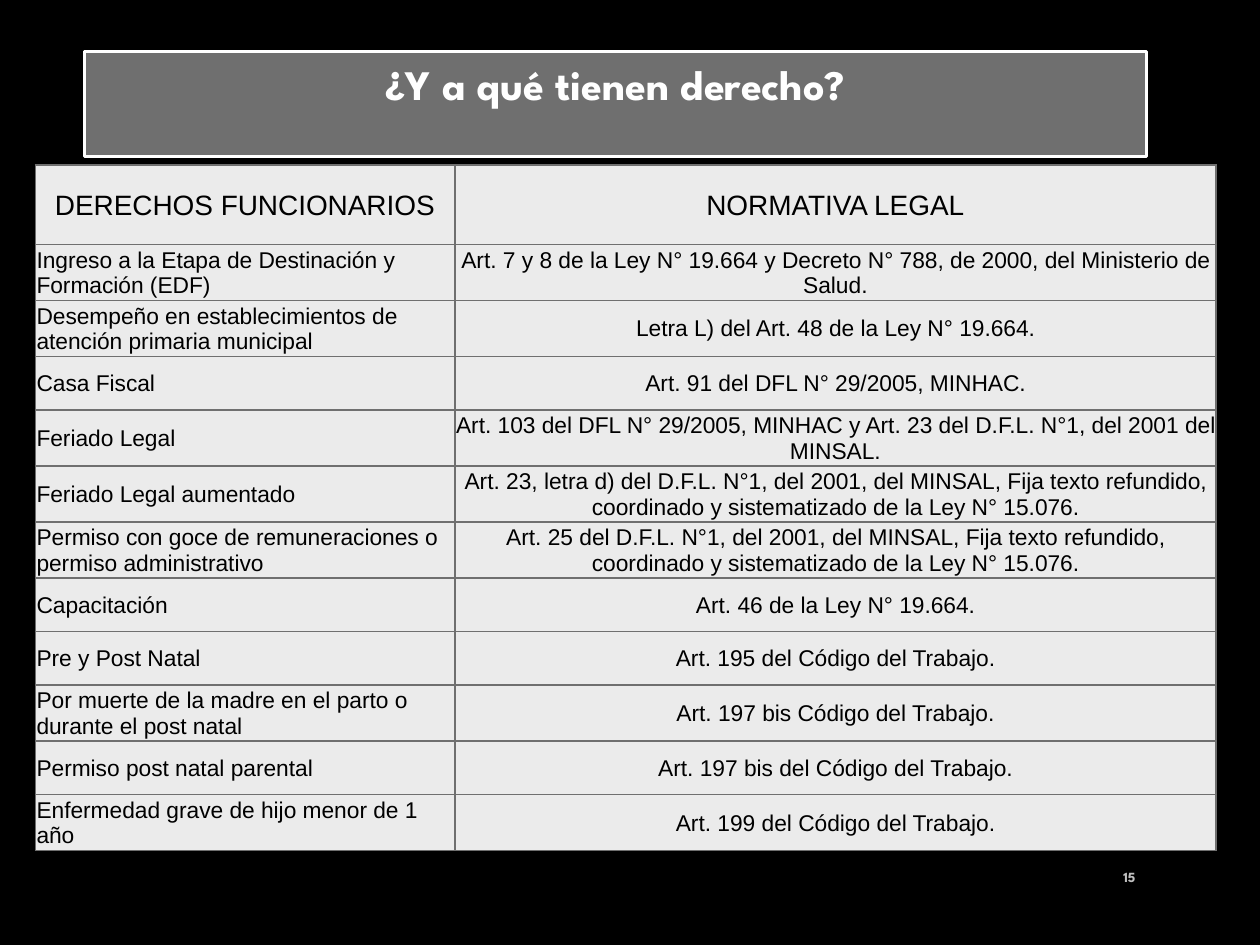
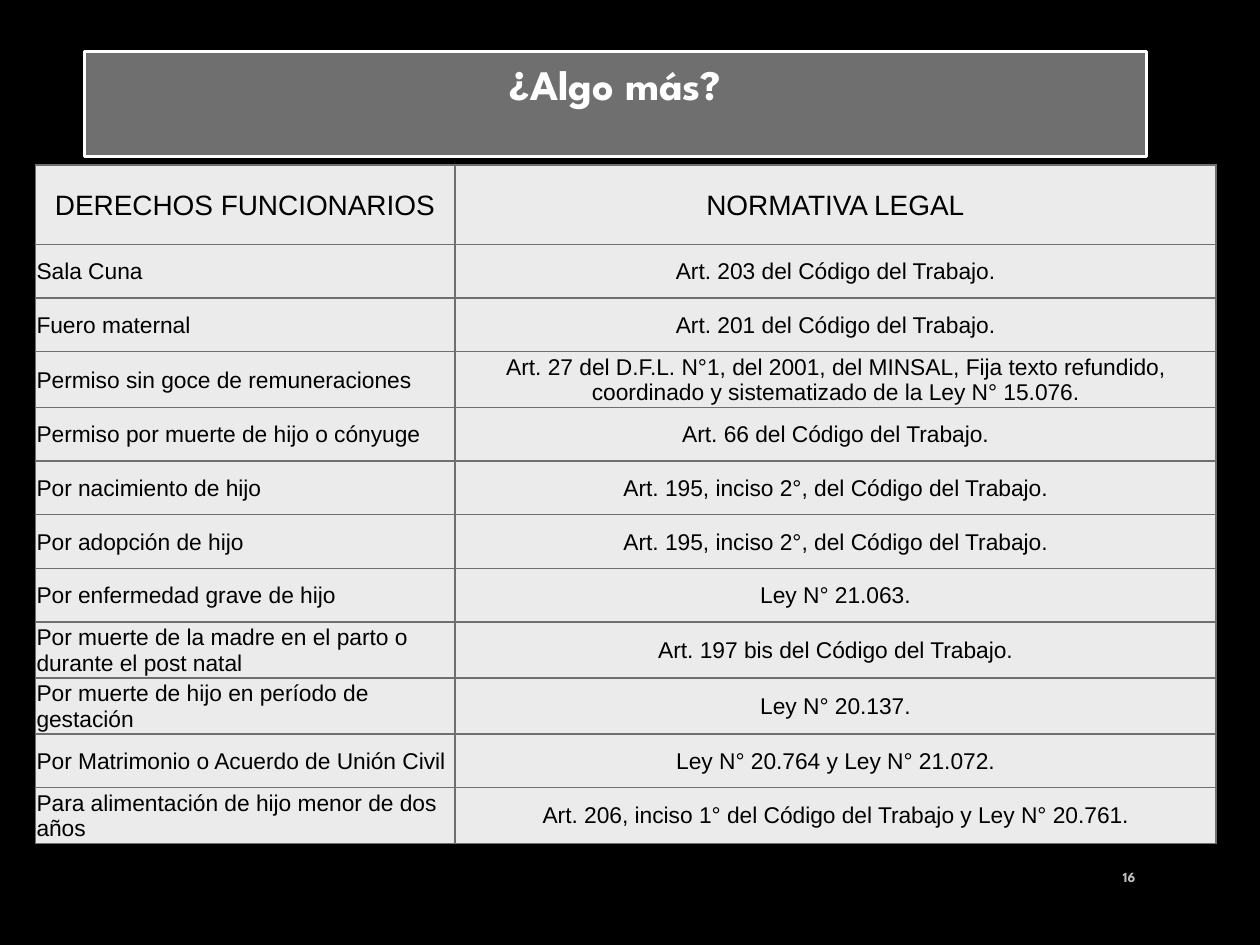
import pptx
import pptx.dml.color
import pptx.enum.text
import pptx.oxml
import pptx.oxml.ns
import pptx.util

WIDE, HIGH = pptx.util.Inches(10), pptx.util.Inches(7.5)
COL, ROW = WIDE / 100, HIGH / 100
BLACK, GREY, PALE, WHITE, DIM = "000000", "6F6F6F", "EBEBEB", "FFFFFF", "BFBFBF"
BRAND, PLAIN = "League Spartan", "Arial"
ALIGN = pptx.enum.text.PP_ALIGN
ANCHOR = pptx.enum.text.MSO_ANCHOR

TITLE_BOX = (6.7, 5.47, 84.3, 6.67)
PAGE_BOX = (86.6, 90.13, 4.5, 5.33)
TABLE_BOX = (2.8, 17.47, 93.7, 70.77)
LEFT_COL = 33.3
HEAD_ROW, BODY_ROW = 8.4, 5.67

HEADS = ("DERECHOS FUNCIONARIOS", "NORMATIVA LEGAL")
REST = "del MINSAL, Fija texto refundido, coordinado y sistematizado de la Ley N° 15.076."
RIGHTS = [
    ("Ingreso a la Etapa de Destinación y Formación (EDF)",
     "Art. 7 y 8 de la Ley N° 19.664 y Decreto N° 788, de 2000, del Ministerio de Salud."),
    ("Desempeño en establecimientos de atención primaria municipal",
     "Letra L) del Art. 48 de la Ley N° 19.664."),
    ("Casa Fiscal", "Art. 91 del DFL N° 29/2005, MINHAC."),
    ("Feriado Legal",
     "Art. 103 del DFL N° 29/2005, MINHAC y Art. 23 del D.F.L. N°1, del 2001 del MINSAL."),
    ("Feriado Legal aumentado", "Art. 23, letra d) del D.F.L. N°1, del 2001, " + REST),
    ("Permiso con goce de remuneraciones o permiso administrativo",
     "Art. 25 del D.F.L. N°1, del 2001, " + REST),
    ("Capacitación", "Art. 46 de la Ley N° 19.664."),
    ("Pre y Post Natal", "Art. 195 del Código del Trabajo."),
    ("Por muerte de la madre en el parto o durante el post natal",
     "Art. 197 bis Código del Trabajo."),
    ("Permiso post natal parental", "Art. 197 bis del Código del Trabajo."),
    ("Enfermedad grave de hijo menor de 1 año", "Art. 199 del Código del Trabajo."),
]
MORE = [
    ("Sala Cuna", "Art. 203 del Código del Trabajo."),
    ("Fuero maternal", "Art. 201 del Código del Trabajo."),
    ("Permiso sin goce de remuneraciones", "Art. 27 del D.F.L. N°1, del 2001, " + REST),
    ("Permiso por muerte de hijo o cónyuge", "Art. 66 del Código del Trabajo."),
    ("Por nacimiento de hijo", "Art. 195, inciso 2°, del Código del Trabajo."),
    ("Por adopción de hijo", "Art. 195, inciso 2°, del Código del Trabajo."),
    ("Por enfermedad grave de hijo", "Ley N° 21.063."),
    ("Por muerte de la madre en el parto o durante el post natal",
     "Art. 197 bis del Código del Trabajo."),
    ("Por muerte de hijo en período de gestación", "Ley N° 20.137."),
    ("Por Matrimonio o Acuerdo de Unión Civil", "Ley N° 20.764 y Ley N° 21.072."),
    ("Para alimentación de hijo menor de dos años",
     "Art. 206, inciso 1° del Código del Trabajo y Ley N° 20.761."),
]


def tint(code):
    """Turn a hex string into a colour."""
    return pptx.dml.color.RGBColor.from_string(code)


def paint(fill, code):
    """Make a fill solid in one colour."""
    fill.solid()
    fill.fore_color.rgb = tint(code)


def place(box):
    """Turn a box in grid columns and rows into lengths."""
    left, top, width, height = box
    return round(left * COL), round(top * ROW), round(width * COL), round(height * ROW)


def write(frame, text, size, face, code, align, bold=False):
    """Put one styled paragraph into a text frame."""
    frame.word_wrap = True
    frame.text = text
    line = frame.paragraphs[0]
    line.alignment = align
    font = line.runs[0].font
    font.size, font.name, font.bold = pptx.util.Pt(size), face, bold
    font.color.rgb = tint(code)


def add_title(slide, box, text):
    """Set the title as a framed grey band."""
    band = slide.shapes.title
    band.left, band.top, band.width, band.height = place(box)
    paint(band.fill, GREY)
    band.line.color.rgb = tint(WHITE)
    band.line.width = pptx.util.Pt(2)
    write(band.text_frame, text, 24, BRAND, WHITE, ALIGN.CENTER, True)
    band.text_frame.vertical_anchor = ANCHOR.TOP
    band.text_frame.auto_size = pptx.enum.text.MSO_AUTO_SIZE.SHAPE_TO_FIT_TEXT


def add_page(slide, box, page):
    """Write the page number in its box."""
    frame = slide.shapes.add_textbox(*place(box)).text_frame
    frame.vertical_anchor = ANCHOR.MIDDLE
    write(frame, str(page), 8, BRAND, DIM, ALIGN.RIGHT, True)


def edge(cell):
    """Draw thin grey borders on all sides of a cell."""
    for side in "LRTB":
        cell._tc.get_or_add_tcPr().append(pptx.oxml.parse_xml(
            f'<a:ln{side} {pptx.oxml.ns.nsdecls("a")} w="12700"><a:solidFill>'
            f'<a:srgbClr val="{GREY}"/></a:solidFill></a:ln{side}>'))


def add_grid(slide, box, rows):
    """Build the table of rights and their legal rules."""
    lines = [HEADS, *rows]
    grid = slide.shapes.add_table(len(lines), len(HEADS), *place(box)).table
    grid.first_row = grid.horz_banding = False
    grid.columns[0].width = round(LEFT_COL * COL)
    grid.columns[1].width = round((box[2] - LEFT_COL) * COL)
    for r, line in enumerate(lines):
        grid.rows[r].height = round((BODY_ROW if r else HEAD_ROW) * ROW)
        for c, text in enumerate(line):
            cell = grid.cell(r, c)
            edge(cell)
            paint(cell.fill, PALE)
            cell.vertical_anchor = ANCHOR.MIDDLE
            cell.margin_left = cell.margin_right = cell.margin_top = pptx.util.Inches(0.01)
            cell.margin_bottom = 0
            align = ALIGN.LEFT if r and not c else ALIGN.CENTER
            write(cell.text_frame, text, 13 if r else 16, PLAIN, BLACK, align)


def add_slide(deck, page, title, rows):
    """Add one slide with title, table and page number."""
    slide = deck.slides.add_slide(deck.slide_layouts[5])
    add_page(slide, PAGE_BOX, page)
    add_title(slide, TITLE_BOX, title)
    add_grid(slide, TABLE_BOX, rows)


def main():
    """Build and save the deck."""
    deck = pptx.Presentation()
    deck.slide_width, deck.slide_height = WIDE, HIGH
    paint(deck.slide_master.background.fill, BLACK)
    add_slide(deck, 15, "¿Y a qué tienen derecho?", RIGHTS)
    add_slide(deck, 16, "¿Algo más?", MORE)
    deck.save("out.pptx")


if __name__ == "__main__":
    main()
